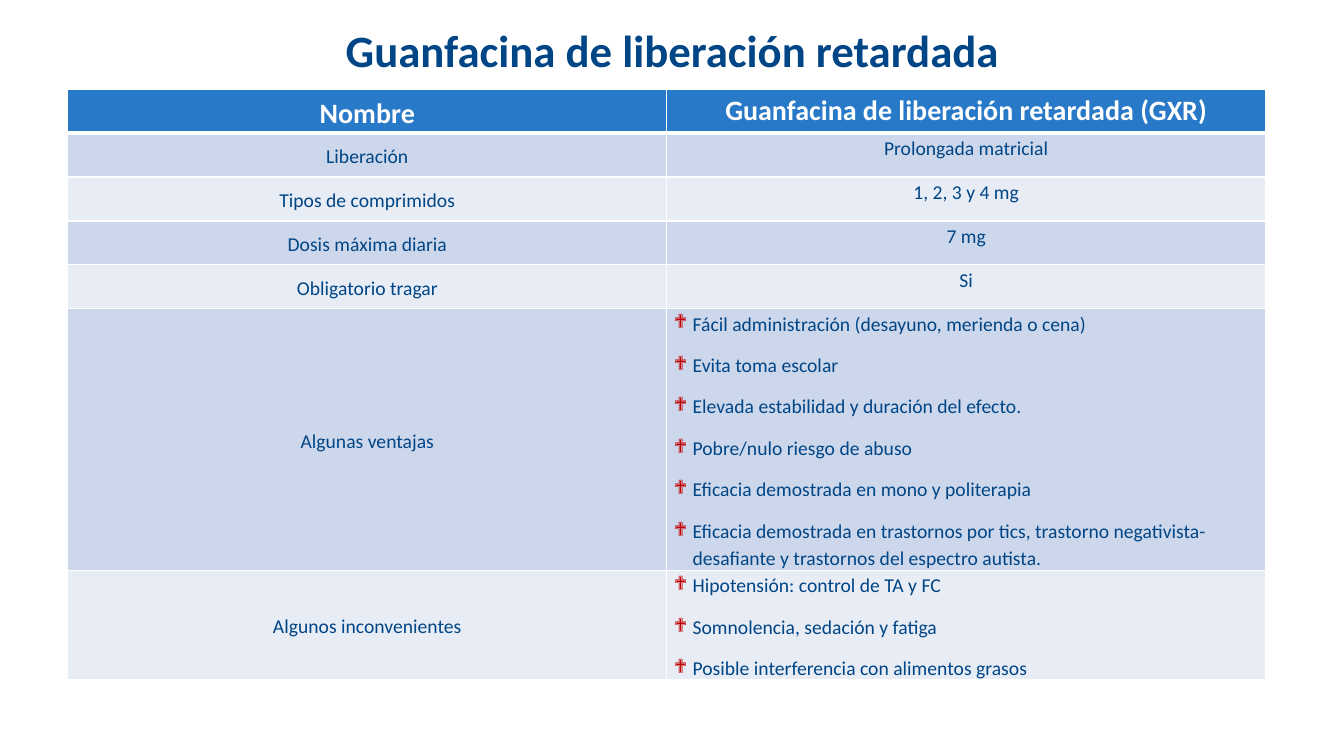
"""Builds a slide with a table on extended-release guanfacine."""
from lxml.etree import SubElement
from pptx import Presentation
from pptx.dml.color import RGBColor
from pptx.enum.text import MSO_ANCHOR as Anchor, PP_ALIGN as Align
from pptx.oxml.ns import qn
from pptx.util import Pt

TITLE = "Guanfacina de liberación retardada"
HEADER = ("Nombre", "Guanfacina de liberación retardada (GXR)")
FACTS = [
    ("Liberación", "Prolongada matricial"),
    ("Tipos de comprimidos", "1, 2, 3 y 4 mg"),
    ("Dosis máxima diaria", "7 mg"),
    ("Obligatorio tragar", "Si"),
]
LISTS = [
    ("Algunas ventajas", [
        "Fácil administración (desayuno, merienda o cena)",
        "Evita toma escolar",
        "Elevada estabilidad y duración del efecto.",
        "Pobre/nulo riesgo de abuso",
        "Eficacia demostrada en mono y politerapia",
        "Eficacia demostrada en trastornos por tics, trastorno negativista-"
        "desafiante y trastornos del espectro autista.",
    ]),
    ("Algunos inconvenientes", [
        "Hipotensión: control de TA y FC",
        "Somnolencia, sedación y fatiga",
        "Posible interferencia con alimentos grasos",
    ]),
]
ROWS = [HEADER, *FACTS, *LISTS]
HEIGHTS = [31.4] * (1 + len(FACTS)) + [187, 78]

FONT = "Calibri"
NAVY = RGBColor(0x00, 0x45, 0x86)
BLUE = RGBColor(0x28, 0x7A, 0xC8)
WHITE = RGBColor(0xFF, 0xFF, 0xFF)
RED = RGBColor(0xC0, 0x00, 0x00)
BANDS = (RGBColor(0xE8, 0xEC, 0xF5), RGBColor(0xCD, 0xD7, 0xEB))

LEFT, TABLE_TOP, COLUMN = 48.5, 63.7, 427.8
INDENT = 13.5


def style(paragraph, size, color, bold):
    for run in paragraph.runs:
        run.font.name = FONT
        run.font.size = Pt(size)
        run.font.bold = bold
        run.font.color.rgb = color


def add_color(parent, color):
    SubElement(parent, qn("a:srgbClr"), val=str(color))


def add_bullet(paragraph):
    properties = paragraph._p.get_or_add_pPr()
    properties.set("marL", str(Pt(INDENT)))
    properties.set("indent", str(-Pt(INDENT)))
    add_color(SubElement(properties, qn("a:buClr")), RED)
    SubElement(properties, qn("a:buFont"), typeface="Wingdings")
    SubElement(properties, qn("a:buChar"), char="❖")


def add_borders(cell, row):
    widths = {"L": 1, "R": 1, "T": 3 if row == 1 else 1, "B": 3 if row == 0 else 1}
    for side, width in widths.items():
        line = SubElement(cell._tc.get_or_add_tcPr(), qn(f"a:ln{side}"), w=str(Pt(width)))
        add_color(SubElement(line, qn("a:solidFill")), WHITE)


def fill_cell(cell, content, row, column):
    is_list = isinstance(content, list)
    is_header = row == 0
    cell.margin_left = cell.margin_right = Pt(5)
    cell.margin_top = cell.margin_bottom = Pt(0)
    cell.vertical_anchor = Anchor.TOP if column else Anchor.MIDDLE
    add_borders(cell, row)
    cell.fill.solid()
    cell.fill.fore_color.rgb = BLUE if is_header else BANDS[row % 2]
    cell.text_frame.text = "\n".join(content) if is_list else content
    for paragraph in cell.text_frame.paragraphs:
        paragraph.line_spacing = 1.15
        paragraph.space_after = Pt(10)
        paragraph.alignment = Align.LEFT if is_list else Align.CENTER
        if is_list:
            add_bullet(paragraph)
        style(paragraph, 20 if is_header else 14, WHITE if is_header else NAVY, is_header)


def main():
    deck = Presentation()
    deck.slide_width, deck.slide_height = Pt(960), Pt(540)
    slide = deck.slides.add_slide(deck.slide_layouts[6])

    title = slide.shapes.add_textbox(Pt(LEFT), Pt(12), Pt(864), Pt(47.5)).text_frame
    title.word_wrap = True
    title.vertical_anchor = Anchor.MIDDLE
    title.text = TITLE
    title.paragraphs[0].alignment = Align.CENTER
    style(title.paragraphs[0], 32, NAVY, True)

    table = slide.shapes.add_table(len(ROWS), 2, Pt(LEFT), Pt(TABLE_TOP),
                                   Pt(2 * COLUMN), Pt(sum(HEIGHTS))).table
    for column in table.columns:
        column.width = Pt(COLUMN)
    for row, (contents, height) in enumerate(zip(ROWS, HEIGHTS)):
        table.rows[row].height = Pt(height)
        for column, content in enumerate(contents):
            fill_cell(table.cell(row, column), content, row, column)

    deck.save("out.pptx")


if __name__ == "__main__":
    main()
